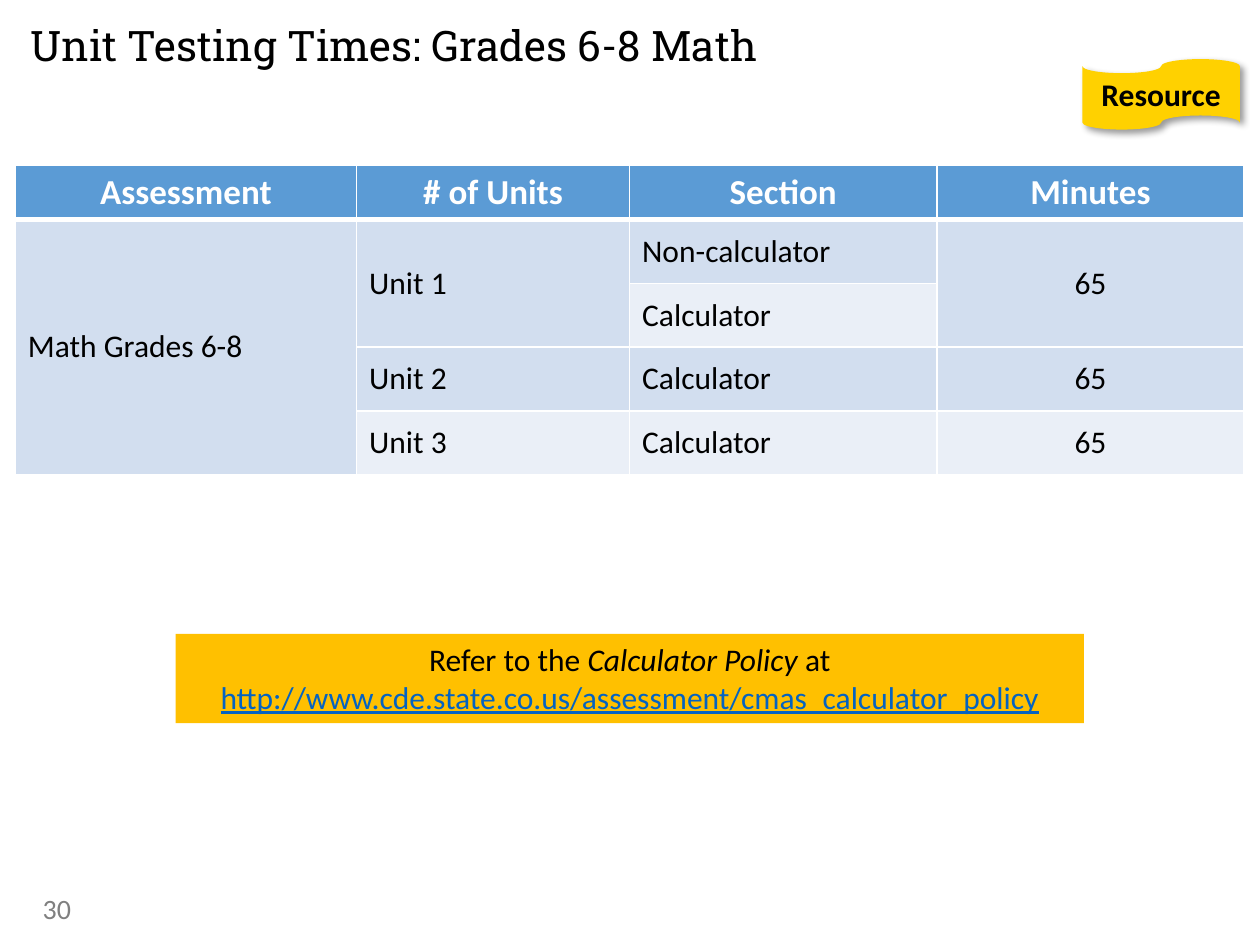
"""Build the slide on unit testing times for Grades 6-8 Math."""
from dataclasses import dataclass

from lxml import etree
from pptx import Presentation
from pptx.dml.color import RGBColor
from pptx.enum.shapes import MSO_SHAPE
from pptx.enum.text import MSO_ANCHOR, PP_ALIGN
from pptx.oxml import parse_xml
from pptx.oxml.ns import nsdecls, qn
from pptx.util import Pt

LEFT, CENTER = PP_ALIGN.LEFT, PP_ALIGN.CENTER
MIDDLE, TOP = MSO_ANCHOR.MIDDLE, MSO_ANCHOR.TOP
TAPE, RECTANGLE = MSO_SHAPE.FLOWCHART_PUNCHED_TAPE, MSO_SHAPE.RECTANGLE
BODY_FONT, TITLE_FONT = "Calibri", "Roboto Slab"
COLORS = {
    "text": "000000", "white": "FFFFFF", "number": "808080", "link": "0563C1",
    "header": "5B9BD5", "dark band": "D2DEEF", "light band": "EAEFF7",
    "resource": "FFD100", "policy": "FFC000",
}


@dataclass(frozen=True)
class Box:
    left: float
    top: float
    width: float
    height: float

    def lengths(self) -> tuple:
        return Pt(self.left), Pt(self.top), Pt(self.width), Pt(self.height)


@dataclass(frozen=True)
class Style:
    size: float
    color: str = "text"
    bold: bool = False
    italic: bool = False
    underline: bool = False
    family: str = BODY_FONT


HEADER = Style(20, "white", bold=True)
BODY = Style(18)
HEADINGS = ("Assessment", "# of Units", "Section", "Minutes")
SCHEDULE = (
    ("Math Grades 6-8", "Unit 1", "Non-calculator", "65"),
    ("", "", "Calculator", ""),
    ("", "Unit 2", "Calculator", "65"),
    ("", "Unit 3", "Calculator", "65"),
)
MERGES = (((1, 0), (4, 0)), ((1, 1), (2, 1)), ((1, 3), (2, 3)))
COLUMN_WIDTHS = (195, 156, 175.6, 175.6)
HEADER_HEIGHT, ROW_HEIGHT = 31, 36.4
POLICY = (
    ("Refer to the ", BODY),
    ("Calculator Policy", Style(18, italic=True)),
    (" at ", BODY),
    ("http://www.cde.state.co.us/assessment/cmas_calculator_policy",
     Style(18, "link", underline=True)),
)


def rgb(name: str) -> RGBColor:
    return RGBColor.from_string(COLORS[name])


def format_run(run, style: Style) -> None:
    run.font.name = style.family
    run.font.size = Pt(style.size)
    run.font.bold = style.bold
    run.font.italic = style.italic
    run.font.underline = style.underline
    run.font.color.rgb = rgb(style.color)


def write(frame, text: str, style: Style, align=LEFT) -> None:
    frame.text = text
    paragraph = frame.paragraphs[0]
    paragraph.alignment = align
    for run in paragraph.runs:
        format_run(run, style)


def set_borders(cell, widths: dict) -> None:
    properties = cell._tc.get_or_add_tcPr()
    for side, width in widths.items():
        properties.append(parse_xml(
            f'<a:ln{side} {nsdecls("a")} w="{Pt(width)}"><a:solidFill>'
            f'<a:srgbClr val="{COLORS["white"]}"/></a:solidFill></a:ln{side}>'))


def add_title(slide, text: str, box: Box) -> None:
    title = slide.shapes.title
    title.left, title.top, title.width, title.height = box.lengths()
    frame = title.text_frame
    frame.margin_left = frame.margin_right = frame.margin_top = frame.margin_bottom = 0
    frame.vertical_anchor = MIDDLE
    write(frame, text, Style(24, family=TITLE_FONT))
    frame.paragraphs[0].line_spacing = 0.9


def add_schedule(slide, box: Box) -> None:
    rows = (HEADINGS, *SCHEDULE)
    table = slide.shapes.add_table(len(rows), len(HEADINGS), *box.lengths()).table
    for column, width in zip(table.columns, COLUMN_WIDTHS):
        column.width = Pt(width)
    for first, last in MERGES:
        table.cell(*first).merge(table.cell(*last))
    for r, row in enumerate(rows):
        table.rows[r].height = Pt(ROW_HEIGHT if r else HEADER_HEIGHT)
        band = "dark band" if r % 2 else "light band"
        for c, text in enumerate(row):
            cell = table.cell(r, c)
            if not cell.is_spanned:
                set_borders(cell, {"L": 1, "R": 1, "T": 3 if r == 1 else 1,
                                   "B": 1 if r else 3})
            cell.fill.solid()
            if r == 0:
                cell.fill.fore_color.rgb = rgb("header")
            else:
                cell.fill.fore_color.rgb = rgb("dark band" if r == 3 else band)
                cell.margin_left = cell.margin_right = Pt(7.2)
                cell.margin_top = cell.margin_bottom = Pt(7.2)
            cell.vertical_anchor = MIDDLE
            centered = r == 0 or c == len(HEADINGS) - 1
            write(cell.text_frame, text, BODY if r else HEADER,
                  CENTER if centered else LEFT)


def add_panel(slide, preset, box: Box, fill: str, anchor):
    panel = slide.shapes.add_shape(preset, *box.lengths())
    panel.shadow.inherit = False
    panel.fill.solid()
    panel.fill.fore_color.rgb = rgb(fill)
    panel.line.fill.background()
    panel.text_frame.word_wrap = True
    panel.text_frame.vertical_anchor = anchor
    return panel


def add_resource_flag(slide, box: Box) -> None:
    flag = add_panel(slide, TAPE, box, "resource", MIDDLE)
    flag.text_frame.margin_left = flag.text_frame.margin_right = 0
    write(flag.text_frame, "Resource", Style(18, bold=True), CENTER)
    effects = flag._element.spPr.find(qn("a:effectLst"))
    shadow = etree.SubElement(effects, qn("a:outerShdw"), blurRad=str(Pt(4)),
                              dist=str(Pt(3)), dir="2700000", algn="tl",
                              rotWithShape="0")
    color = etree.SubElement(shadow, qn("a:srgbClr"), val=COLORS["text"])
    etree.SubElement(color, qn("a:alpha"), val="40000")


def add_policy_note(slide, box: Box) -> None:
    note = add_panel(slide, RECTANGLE, box, "policy", TOP)
    paragraph = note.text_frame.paragraphs[0]
    paragraph.alignment = CENTER
    for text, style in POLICY:
        run = paragraph.add_run()
        run.text = text
        format_run(run, style)


def add_page_number(slide, number: str, box: Box) -> None:
    frame = slide.shapes.add_textbox(*box.lengths()).text_frame
    frame.word_wrap = True
    write(frame, number, Style(16, "number"))


def main() -> None:
    deck = Presentation()
    deck.slide_width, deck.slide_height = Pt(720), Pt(540)
    slide = deck.slides.add_slide(deck.slide_layouts[5])
    add_title(slide, "Unit Testing Times: Grades 6-8 Math", Box(17.3, 13, 684.7, 28.8))
    add_page_number(slide, "30", Box(17.3, 506.2, 162, 28.8))
    add_schedule(slide, Box(8.8, 94.3, sum(COLUMN_WIDTHS),
                            HEADER_HEIGHT + len(SCHEDULE) * ROW_HEIGHT))
    add_resource_flag(slide, Box(618.5, 33.8, 90, 40.3))
    add_policy_note(slide, Box(100.3, 362.2, 519.1, 51))
    deck.save("out.pptx")


if __name__ == "__main__":
    main()
